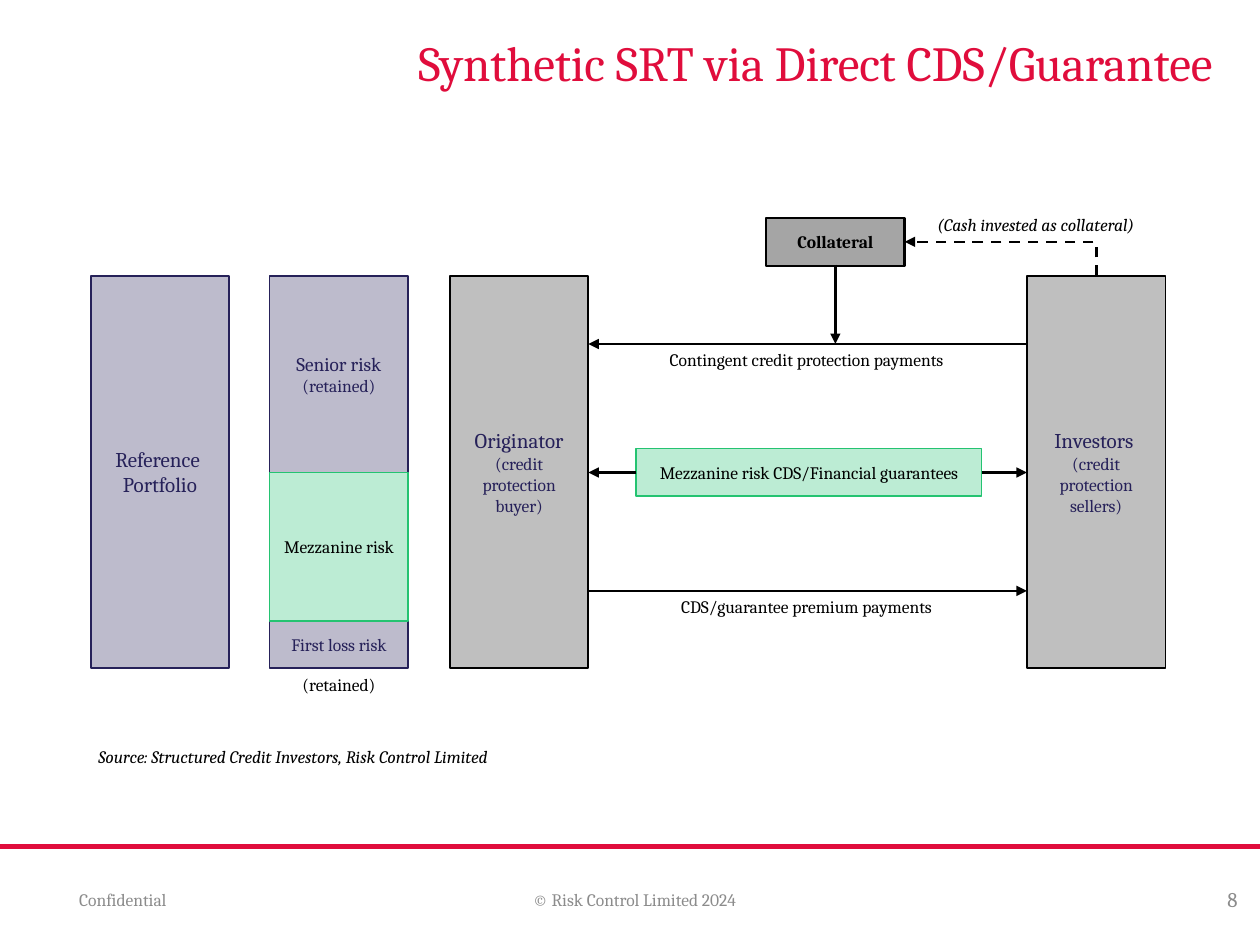
from lxml import etree
from pptx import Presentation
from pptx.dml.color import RGBColor
from pptx.enum.dml import MSO_LINE
from pptx.enum.shapes import MSO_CONNECTOR as LINK, MSO_SHAPE
from pptx.enum.text import MSO_ANCHOR, PP_ALIGN
from pptx.oxml.ns import qn
from pptx.util import Inches, Pt

COLORS = {"red": "E00D3C", "navy": "262159", "green": "24C371", "black": "000000",
          "silver": "BFBFBF", "gray": "A5A5A5", "footer": "8C8C8C"}
FONT = "Cambria"
LEFT, CENTER, RIGHT = PP_ALIGN.LEFT, PP_ALIGN.CENTER, PP_ALIGN.RIGHT

BAR_TOP, BAR_WIDTH, BAR_HEIGHT = 2.19, 1.1, 3.11
PORTFOLIO_X, TRANCHE_X, ORIGINATOR_X, INVESTOR_X = 0.72, 2.14, 3.57, 8.15
ORIGINATOR_EDGE = ORIGINATOR_X + BAR_WIDTH
COLLATERAL_X = 6.08
MEZZANINE_Y, FIRST_LOSS_Y = 3.75, 4.93
PROTECTION_Y, PREMIUM_Y = 2.73, 4.69
SMALL_HEIGHT = 0.38


def rgb(name):
    return RGBColor.from_string(COLORS[name])


def write(frame, spans, color, align=LEFT, inset=(0.08, 0.04), anchor=MSO_ANCHOR.MIDDLE,
          bold=False, italic=False):
    """Fill one paragraph with (text, size) spans; None stands for a line break."""
    frame.word_wrap = True
    frame.vertical_anchor = anchor
    frame.margin_left = frame.margin_right = Inches(inset[0])
    frame.margin_top = frame.margin_bottom = Inches(inset[1])
    para = frame.paragraphs[0]
    para.alignment = align
    for item in spans:
        if item is None:
            para.add_line_break()
            continue
        span = para.add_run()
        span.text, size = item
        span.font.name = FONT
        span.font.size = Pt(size)
        span.font.bold = bold
        span.font.italic = italic
        span.font.color.rgb = rgb(color)


def add_label(page, x, y, width, height, text, size=10, color="black", **style):
    box = page.shapes.add_textbox(*map(Inches, (x, y, width, height)))
    write(box.text_frame, [(text, size)], color, **style)


def add_block(page, x, y, width, height, spans, fill, line, color,
              alpha=None, weight=1, bold=False):
    block = page.shapes.add_shape(MSO_SHAPE.RECTANGLE, *map(Inches, (x, y, width, height)))
    block.shadow.inherit = False
    block.fill.solid()
    block.fill.fore_color.rgb = rgb(fill)
    if alpha:
        tone = block.fill._xPr.find(".//" + qn("a:srgbClr"))
        etree.SubElement(tone, qn("a:alpha"), val=str(alpha * 1000))
    block.line.color.rgb = rgb(line)
    block.line.width = Pt(weight)
    write(block.text_frame, spans, color, align=CENTER, bold=bold)


def add_line(page, start, end, color="black", weight=1.5, arrow=True, kind=LINK.STRAIGHT):
    line = page.shapes.add_connector(kind, *map(Inches, (*start, *end)))
    line.line.color.rgb = rgb(color)
    line.line.width = Pt(weight)
    if arrow:
        etree.SubElement(line.line._get_or_add_ln(), qn("a:tailEnd"), type="triangle")
    etree.SubElement(line._element.spPr, qn("a:effectLst"))
    return line


def add_dashed_elbow(page, start, end):
    """Go up from start, then left to the arrowhead at end."""
    mid_x, mid_y = (start[0] + end[0]) / 2, (start[1] + end[1]) / 2
    half_run, half_rise = (start[0] - end[0]) / 2, (start[1] - end[1]) / 2
    # The one-bend preset is laid out upright and turned by 270 degrees.
    elbow = add_line(page, (mid_x - half_rise, mid_y + half_run),
                     (mid_x + half_rise, mid_y - half_run), kind=LINK.ELBOW)
    elbow.line.dash_style = MSO_LINE.DASH
    properties = elbow._element.spPr
    properties.find(qn("a:prstGeom")).set("prst", "bentConnector2")
    properties.find(qn("a:xfrm")).set("rot", str(270 * 60000))


def add_title(page):
    title = page.shapes.title
    title.left, title.top, title.width, title.height = map(Inches, (0.7, 0.22, 9, 0.79))
    write(title.text_frame, [("Synthetic SRT via Direct CDS/Guarantee", 28)], "red",
          align=RIGHT, anchor=MSO_ANCHOR.TOP)


def add_footer(page):
    add_line(page, (0, 6.72), (10, 6.72), "red", 2.5, arrow=False)
    for x, width, text, size, align in (
            (0.53, 2.33, "Confidential", 10, LEFT),
            (3.45, 3.17, "© Risk Control Limited 2024", 10, CENTER),
            (7.59, 2.33, "8", 12, RIGHT)):
        add_label(page, x, 6.94, width, 0.4, text, size, "footer",
                  align=align, inset=(0.1, 0.05))


def add_blocks(page):
    bar_bottom = BAR_TOP + BAR_HEIGHT
    for x, y, bottom, spans in (
            (PORTFOLIO_X, BAR_TOP, bar_bottom, [("Reference ", 12), None, ("Portfolio", 12)]),
            (TRANCHE_X, BAR_TOP, MEZZANINE_Y, [("Senior risk", 11), None, ("(retained)", 10)]),
            (TRANCHE_X, FIRST_LOSS_Y, bar_bottom, [("First loss risk", 10)])):
        add_block(page, x, y, BAR_WIDTH, bottom - y, spans, "navy", "navy", "navy", alpha=30)
    for x, spans in (
            (ORIGINATOR_X, [("Originator ", 12), ("(credit protection buyer)", 10)]),
            (INVESTOR_X, [("Investors ", 12), None, ("(credit protection sellers)", 10)])):
        add_block(page, x, BAR_TOP, BAR_WIDTH, BAR_HEIGHT, spans, "silver", "black", "navy")
    for x, y, width, height, text in (
            (TRANCHE_X, MEZZANINE_Y, BAR_WIDTH, FIRST_LOSS_Y - MEZZANINE_Y, "Mezzanine risk"),
            (5.05, 3.56, 2.74, SMALL_HEIGHT, "Mezzanine risk CDS/Financial guarantees")):
        add_block(page, x, y, width, height, [(text, 10)], "green", "green", "black", alpha=30)
    add_block(page, COLLATERAL_X, 1.73, BAR_WIDTH, SMALL_HEIGHT, [("Collateral", 10)],
              "gray", "black", "black", weight=1.25, bold=True)


def add_flows(page):
    collateral_mid = COLLATERAL_X + BAR_WIDTH / 2
    for start, end in (
            ((5.05, MEZZANINE_Y), (ORIGINATOR_EDGE, MEZZANINE_Y)),
            ((7.79, MEZZANINE_Y), (INVESTOR_X, MEZZANINE_Y)),
            ((INVESTOR_X, PROTECTION_Y), (ORIGINATOR_EDGE, PROTECTION_Y)),
            ((collateral_mid, 2.1), (collateral_mid, PROTECTION_Y)),
            ((ORIGINATOR_EDGE, PREMIUM_Y), (INVESTOR_X, PREMIUM_Y))):
        add_line(page, start, end)
    add_dashed_elbow(page, (INVESTOR_X + BAR_WIDTH / 2, BAR_TOP),
                     (COLLATERAL_X + BAR_WIDTH, 1.92))


def add_labels(page):
    for x, y, width, text in (
            (5.1, PROTECTION_Y, 2.6, "Contingent credit protection payments"),
            (5.1, PREMIUM_Y, 2.6, "CDS/guarantee premium payments"),
            (TRANCHE_X, 5.31, BAR_WIDTH, "(retained)")):
        add_label(page, x, y, width, 0.25, text, align=CENTER, inset=(0.04, 0.04))
    add_label(page, 7.4, 1.66, 1.77, 0.25, "(Cash invested as collateral)",
              italic=True, inset=(0.04, 0.04))
    add_label(page, 0.7, 5.88, 4.72, 0.25,
              "Source: Structured Credit Investors, Risk Control Limited", italic=True)


def main():
    deck = Presentation()
    deck.slide_width, deck.slide_height = Inches(10), Inches(7.5)
    page = deck.slides.add_slide(deck.slide_layouts[5])
    add_title(page)
    add_footer(page)
    add_blocks(page)
    add_flows(page)
    add_labels(page)
    deck.save("out.pptx")


if __name__ == "__main__":
    main()
